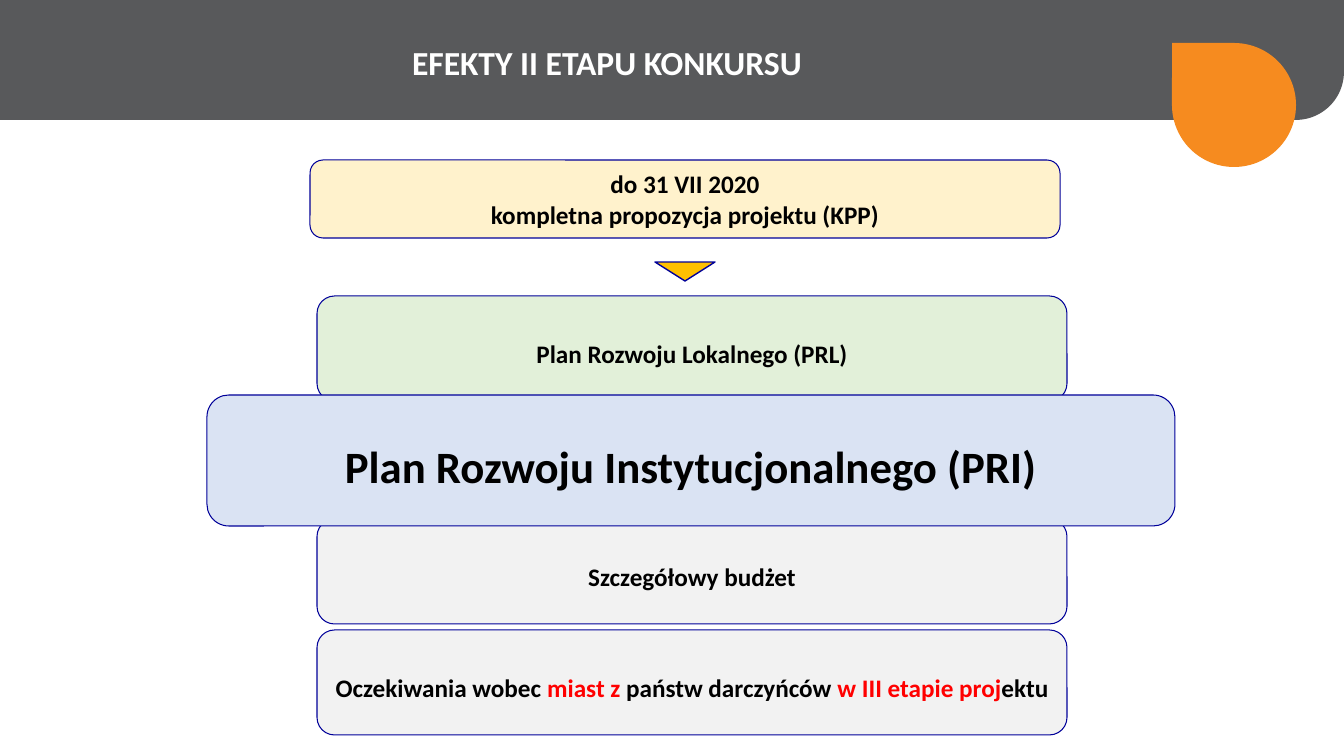
from pptx import Presentation
from pptx.dml.color import RGBColor
from pptx.enum.shapes import MSO_SHAPE
from pptx.enum.text import MSO_ANCHOR, PP_ALIGN
from pptx.util import Emu, Pt

COLORS = {
    "black": "000000", "white": "FFFFFF", "red": "FF0000",
    "header": "58595B", "orange": "F68B1F", "amber": "FFC000",
    "navy": "000099", "green": "E2F0D9", "gray": "F2F2F2",
    "cream": "FFF2CC", "blue": "DAE3F3",
}
SLIDE_W, SLIDE_H = 1344, 756
EMU_PER_PX = 914400 / 100.8

TITLE = "EFEKTY II ETAPU KONKURSU"
DEADLINE = [
    [("do 31 VII 2020", "black")],
    [("kompletna propozycja projektu (KPP)", "black")],
]
PRI = [[("Plan Rozwoju Instytucjonalnego (PRI)", "black")]]
# top, fill, lines of (text, colour) runs
PLAN_BOXES = [
    (296, "green", [[("Plan Rozwoju Lokalnego (PRL)", "black")]]),
    (519, "gray", [[("Szczegółowy budżet", "black")]]),
    (630, "gray", [[
        ("Oczekiwania wobec ", "black"), ("miast z", "red"),
        (" państw darczyńców ", "black"), ("w III etapie proj", "red"),
        ("ektu", "black"),
    ]]),
]
BOX_W, BOX_H = 750, 105
PLAN_X, DEADLINE_X = 317, 310
TEXT_DROP = 10


def px(n):
    return Emu(round(n * EMU_PER_PX))


def rgb(name):
    return RGBColor.from_string(COLORS[name])


def add_text(sp, lines, size=18, align=PP_ALIGN.CENTER,
             anchor=MSO_ANCHOR.MIDDLE, side=10, drop=0):
    """Write lines of (text, colour) runs; drop moves them below the middle."""
    tf = sp.text_frame
    tf.word_wrap = True
    tf.vertical_anchor = anchor
    tf.margin_left = tf.margin_right = px(side)
    tf.margin_top, tf.margin_bottom = px(5 + drop), px(5)
    for i, line in enumerate(lines):
        p = tf.paragraphs[0] if i == 0 else tf.add_paragraph()
        p.alignment = align
        for text, color in line:
            r = p.add_run()
            r.text = text
            r.font.name = "Calibri"
            r.font.size = Pt(size)
            r.font.bold = True
            r.font.color.rgb = rgb(color)


def add_shape(s, kind, x, y, w, h, fill, line_width=0, rotation=0):
    sp = s.shapes.add_shape(kind, px(x), px(y), px(w), px(h))
    sp.shadow.inherit = False
    sp.rotation = rotation
    sp.fill.solid()
    sp.fill.fore_color.rgb = rgb(fill)
    if line_width:
        sp.line.color.rgb = rgb("navy")
        sp.line.width = Pt(line_width)
    else:
        sp.line.fill.background()
    return sp


def add_box(s, x, y, w, h, fill, lines, **text_format):
    sp = add_shape(s, MSO_SHAPE.ROUNDED_RECTANGLE, x, y, w, h, fill, 0.75)
    add_text(sp, lines, **text_format)


def main():
    prs = Presentation()
    prs.slide_width, prs.slide_height = px(SLIDE_W), px(SLIDE_H)
    s = prs.slides.add_slide(prs.slide_layouts[6])

    header = add_shape(s, MSO_SHAPE.ROUND_1_RECTANGLE,
                       0, -2, SLIDE_W, 122, "header")
    header.adjustments[0] = 0.395
    header.element.spPr.xfrm.set("flipV", "1")
    add_shape(s, MSO_SHAPE.TEAR, 1172, 43, 124, 124, "orange", rotation=270)
    title = s.shapes.add_textbox(px(402), px(37), px(927), px(50))
    add_text(title, [[(TITLE, "white")]], size=24, align=PP_ALIGN.LEFT,
             anchor=MSO_ANCHOR.TOP)

    add_box(s, DEADLINE_X, 160, BOX_W, 78, "cream", DEADLINE)
    add_shape(s, MSO_SHAPE.ISOSCELES_TRIANGLE, 655, 262, 60, 19, "amber",
              line_width=1, rotation=180)
    for y, fill, lines in PLAN_BOXES:
        add_box(s, PLAN_X, y, BOX_W, BOX_H, fill, lines,
                side=5, drop=TEXT_DROP)
    add_box(s, 207, 395, 968, 131, "blue", PRI, size=32, drop=TEXT_DROP)

    prs.save("out.pptx")


if __name__ == "__main__":
    main()
